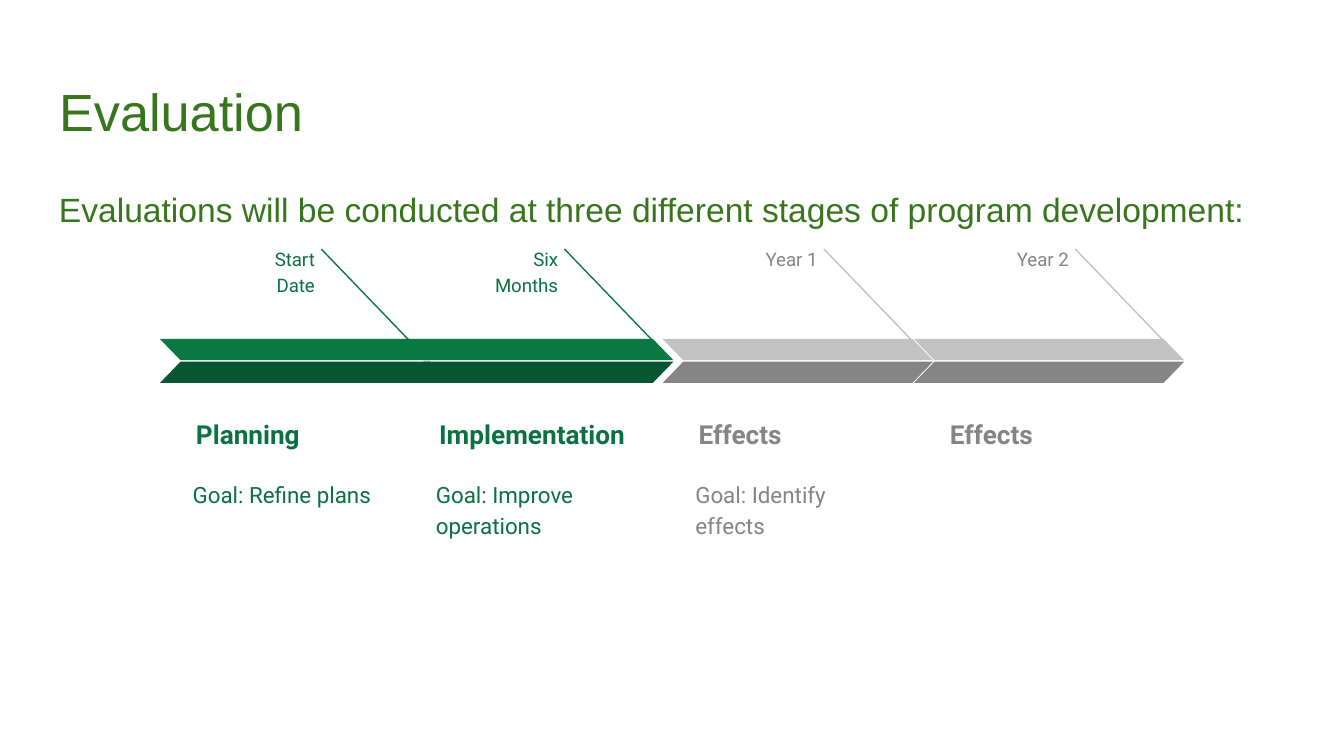
from pptx import Presentation
from pptx.dml.color import RGBColor
from pptx.enum.shapes import MSO_CONNECTOR as Line, MSO_SHAPE as Shape
from pptx.enum.text import MSO_ANCHOR as Anchor, PP_ALIGN as Align
from pptx.oxml.ns import qn
from pptx.util import Pt
from lxml.etree import SubElement

GREEN = dict(text="0B7140", top="0B7743", base="085631")
GRAY = dict(text="858585", top="C2C2C2", base="858585")

# Left edge, label, label height, heading, goal, colours
STAGES = [
    (85.7, "Start Date", 35, "Planning", "Goal: Refine plans", GREEN),
    (216, "Six Months", 33, "Implementation", "Goal: Improve operations", GREEN),
    (355, "Year 1", 19, "Effects", "Goal: Identify effects", GRAY),
    (489.6, "Year 2", 19, "Effects", None, GRAY),
]


def color(code):
    return RGBColor.from_string(code)


def put_text(shape, text, size, ink, font="Roboto", bold=False,
             align=Align.LEFT, anchor=Anchor.TOP, space=1.15, after=0):
    frame = shape.text_frame
    frame.word_wrap = True
    frame.vertical_anchor = anchor
    frame.margin_left = frame.margin_right = Pt(7.2)
    frame.margin_top = frame.margin_bottom = Pt(7.2)
    para = frame.paragraphs[0]
    para.alignment = align
    para.line_spacing = space
    para.space_before = Pt(0)
    para.space_after = Pt(after)
    run = para.add_run()
    run.text = text
    run.font.name = font
    run.font.size = Pt(size)
    run.font.bold = bold
    run.font.color.rgb = color(ink)


def add_text(slide, x, y, w, h, text, size, ink, **style):
    box = slide.shapes.add_textbox(Pt(x), Pt(y), Pt(w), Pt(h))
    put_text(box, text, size, ink, **style)


def add_band(slide, x, y, w, h, fill, flip=False):
    band = slide.shapes.add_shape(Shape.PARALLELOGRAM, Pt(x), Pt(y), Pt(w), Pt(h))
    band.adjustments[0] = 0.97
    band.shadow.inherit = False
    band.fill.solid()
    band.fill.fore_color.rgb = color(fill)
    band.line.fill.background()
    if flip:
        band._element.spPr.xfrm.set("flipH", "1")


def add_head(slide, x, y, w):
    title = slide.shapes.title
    title.left, title.top, title.width, title.height = Pt(x), Pt(y), Pt(w), Pt(45.4)
    put_text(title, "Evaluation", 28, "38761D", font="Arial", space=1)
    add_text(slide, x, y + 55.4, w, 33,
             "Evaluations will be conducted at three different stages of program development:",
             18, "38761D", font="Arial")


def add_stage(slide, x, y, w, label, tall, name, goal, tone):
    ink = tone["text"]
    # Date, heading and goal
    add_text(slide, x + 41, y, 49, tall, label, 10, ink, align=Align.RIGHT, after=16)
    add_text(slide, x + 12.2, y + 88.5, 119, 35.5, name, 14, ink,
             bold=True, anchor=Anchor.BOTTOM)
    if goal:
        add_text(slide, x + 10.4, y + 124.5, 121.6, 58, goal, 12, ink, after=16)
    # Slanted marker
    mark = slide.shapes.add_connector(Line.STRAIGHT, Pt(x + 86.4), Pt(y + 9.4),
                                      Pt(x + 142.8), Pt(y + 68))
    mark.line.color.rgb = color(tone["top"])
    mark.line.width = Pt(0.75)
    SubElement(mark._element.spPr, qn("a:effectLst"))
    # Arrow made of two bands
    add_band(slide, x, y + 57.6, w, 11.4, tone["top"], flip=True)
    add_band(slide, x, y + 69.8, w, 11.4, tone["base"])


def main():
    deck = Presentation()
    deck.slide_width, deck.slide_height = Pt(720), Pt(405)
    slide = deck.slides.add_slide(deck.slide_layouts[5])
    add_head(slide, 24.5, 35.3, 671)
    for x, *parts in STAGES:
        add_stage(slide, x, 124, 144.8, *parts)
    deck.save("out.pptx")


if __name__ == "__main__":
    main()
